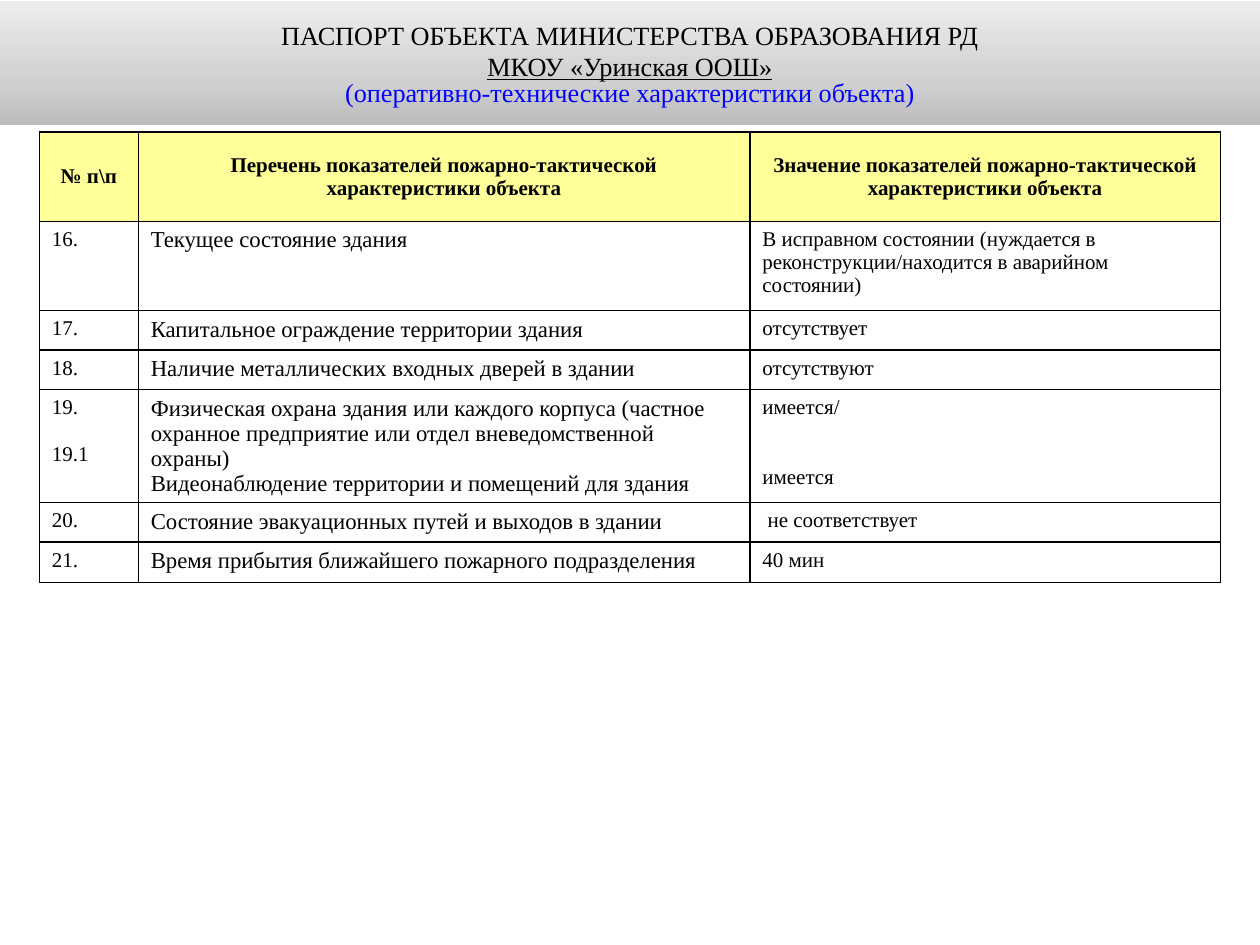
import copy

import pptx
import pptx.dml.color
import pptx.enum.shapes
import pptx.enum.text
import pptx.util
from lxml import etree
from pptx.oxml.ns import qn

Pt = pptx.util.Pt
CENTER = pptx.enum.text.PP_ALIGN.CENTER
LEFT = pptx.enum.text.PP_ALIGN.LEFT
MIDDLE = pptx.enum.text.MSO_ANCHOR.MIDDLE
TOP = pptx.enum.text.MSO_ANCHOR.TOP


def color(hex_code):
    return pptx.dml.color.RGBColor.from_string(hex_code)


def apply(target, values):
    for name, value in values.items():
        setattr(target, name, value)


class Passport:
    font_name = "Times New Roman"
    ink = "000000"
    line_width = Pt(1)

    def __init__(self, slide):
        self.slide = slide

    def paragraph(self, frame, index, text, font, layout, ink=ink):
        line = frame.paragraphs[0] if index == 0 else frame.add_paragraph()
        run = line.add_run()
        run.text = text
        apply(line, layout)
        apply(run.font, {"name": self.font_name, **font})
        run.font.color.rgb = color(ink)

    def banner(self, box, stops, lines):
        banner = self.slide.shapes.add_shape(
            pptx.enum.shapes.MSO_SHAPE.RECTANGLE, *map(Pt, box))
        banner.shadow.inherit = False
        banner.line.fill.background()
        banner.fill.gradient()
        banner.fill.gradient_angle = 90
        # The default gradient has two stops; add the missing ones
        stop_list = banner._element.spPr.find(".//" + qn("a:gsLst"))
        while len(stop_list) < len(stops):
            stop_list.append(copy.deepcopy(stop_list[0]))
        for stop, (position, hex_code) in zip(banner.fill.gradient_stops, stops):
            stop.position = position
            stop.color.rgb = color(hex_code)
        apply(banner.text_frame, {"word_wrap": True, "vertical_anchor": MIDDLE})
        for index, (text, ink, underline, spacing) in enumerate(lines):
            self.paragraph(banner.text_frame, index, text,
                           {"size": Pt(15), "underline": underline},
                           {"alignment": CENTER, "line_spacing": spacing}, ink)

    def borders(self, cell):
        properties = cell._tc.get_or_add_tcPr()
        for side in ("a:lnL", "a:lnR", "a:lnT", "a:lnB"):
            edge = etree.SubElement(properties, qn(side), w=str(self.line_width))
            solid = etree.SubElement(edge, qn("a:solidFill"))
            etree.SubElement(solid, qn("a:srgbClr"), val=self.ink)

    def cell(self, cell, lines, fill, anchor, font, alignment):
        self.borders(cell)
        cell.fill.solid()
        cell.fill.fore_color.rgb = color(fill)
        apply(cell, {"vertical_anchor": anchor,
                     "margin_left": Pt(7.2), "margin_right": Pt(7.2),
                     "margin_top": Pt(3.6), "margin_bottom": Pt(3.6)})
        for index, (text, gap) in enumerate(lines):
            self.paragraph(cell.text_frame, index, text, font,
                           {"alignment": alignment, "space_before": Pt(gap)})

    def table(self, left, top, widths, heights, header, records):
        table = self.slide.shapes.add_table(
            len(heights), len(widths), Pt(left), Pt(top),
            Pt(sum(widths)), Pt(sum(heights))).table
        for column, width in zip(table.columns, widths):
            column.width = Pt(width)
        for row, height in zip(table.rows, heights):
            row.height = Pt(height)
        for column, title in enumerate(header):
            self.cell(table.cell(0, column), [(title, 0)], "FFFF99", MIDDLE,
                      {"size": Pt(12), "bold": True}, CENTER)
        for row, record in enumerate(records, 1):
            for column, content in enumerate(record):
                lines = [(content, 0)] if isinstance(content, str) else content
                size = 13 if column == 1 else 12
                self.cell(table.cell(row, column), lines, "FFFFFF", TOP,
                          {"size": Pt(size), "bold": False}, LEFT)


# Each line: text, colour, underline, line spacing
TITLE = [
    ("ПАСПОРТ ОБЪЕКТА МИНИСТЕРСТВА ОБРАЗОВАНИЯ РД", "000000", False, 1.0),
    ("МКОУ «Уринская ООШ»", "000000", True, 1.0),
    ("(оперативно-технические характеристики объекта)", "0000FF", False, 0.8),
]
HEADER = [
    "№ п\\п",
    "Перечень показателей пожарно-тактической характеристики объекта",
    "Значение показателей пожарно-тактической характеристики объекта",
]
# A cell with several lines lists each with the space before it
LINE = 13.3
RECORDS = [
    ("16.", "Текущее состояние здания",
     "В исправном состоянии (нуждается в реконструкции/находится в аварийном состоянии)"),
    ("17.", "Капитальное ограждение территории здания", "отсутствует"),
    ("18.", "Наличие металлических входных дверей в здании", "отсутствуют"),
    ([("19.", 0), ("19.1", LINE)],
     [("Физическая охрана здания или каждого корпуса (частное охранное "
       "предприятие или отдел вневедомственной охраны)", 0),
      ("Видеонаблюдение территории и помещений для здания", 0)],
     [("имеется/", 0), ("имеется", 2 * LINE)]),
    ("20.", "Состояние эвакуационных путей и выходов в здании", " не соответствует"),
    ("21.", "Время прибытия ближайшего пожарного подразделения", "40 мин"),
]


def main():
    presentation = pptx.Presentation()
    apply(presentation, {"slide_width": Pt(720), "slide_height": Pt(540)})
    passport = Passport(presentation.slides.add_slide(presentation.slide_layouts[6]))

    # Indicators of the building
    passport.table(22.5, 75.5, [56.5, 349.5, 269],
                   [51, 51, 22.6, 22.6, 64.6, 22.6, 23], HEADER, RECORDS)

    # Title banner
    passport.banner((0, 0.5, 720, 71),
                    [(0, "BCBCBC"), (0.35, "D0D0D0"), (1, "EDEDED")], TITLE)

    presentation.save("out.pptx")


if __name__ == "__main__":
    main()
